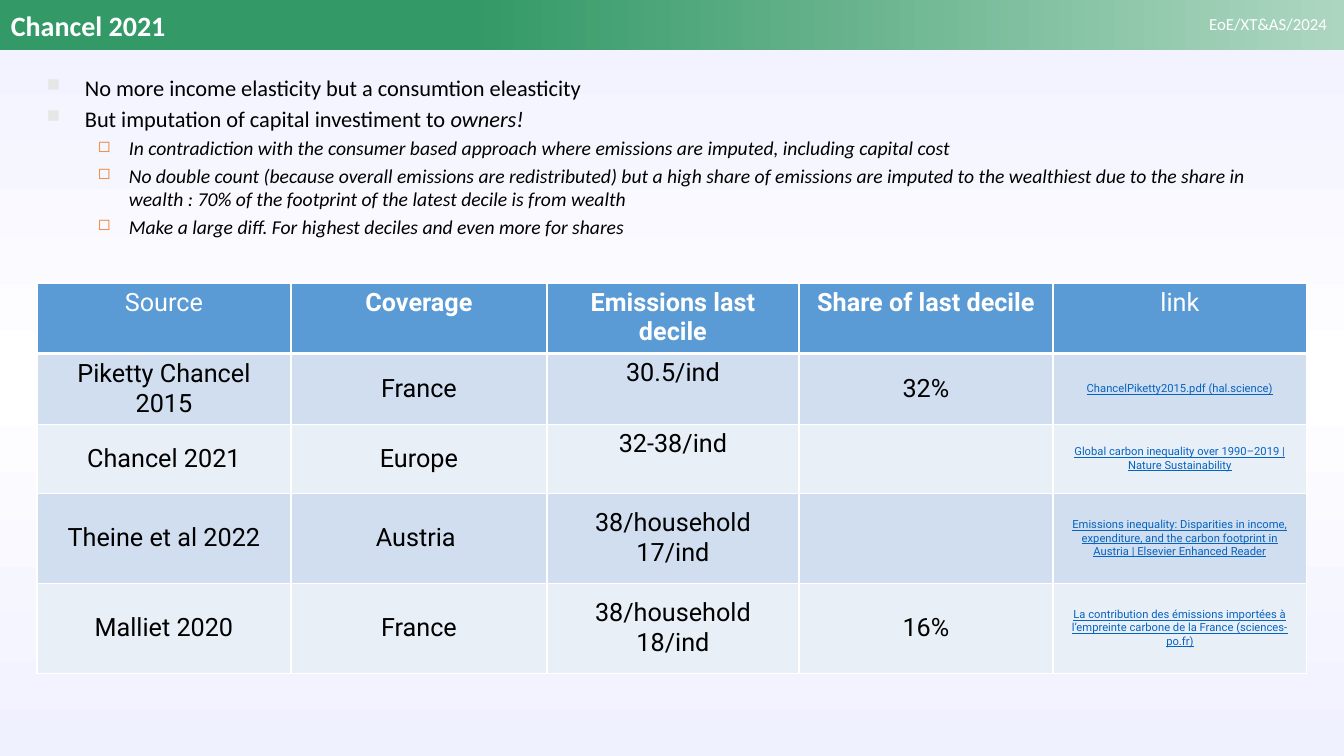
from copy import deepcopy
from lxml import etree
from pptx import Presentation
from pptx.dml.color import RGBColor
from pptx.enum.shapes import MSO_SHAPE
from pptx.enum.text import MSO_ANCHOR, PP_ALIGN
from pptx.oxml.ns import qn
from pptx.util import Pt

RECTANGLE = MSO_SHAPE.RECTANGLE
TOP, MIDDLE = MSO_ANCHOR.TOP, MSO_ANCHOR.MIDDLE
LEFT, RIGHT, CENTER = PP_ALIGN.LEFT, PP_ALIGN.RIGHT, PP_ALIGN.CENTER
PX = 914400 / 100.8
WHITE, BLACK, GREEN, LINK = "FFFFFF", "000000", "339966", "0563C1"


def color(value):
    return RGBColor.from_string(value)


def add_span(para, text, fill, **formats):
    span = para.add_run()
    span.text = text
    span.font.color.rgb = color(fill)
    for name, value in formats.items():
        setattr(span.font, name, value)


deck = Presentation()
deck.slide_width, deck.slide_height = round(1344 * PX), round(756 * PX)
page = deck.slides.add_slide(deck.slide_layouts[6])

backdrop = page.background.fill
backdrop.gradient()
backdrop.gradient_angle = 270
stop_list = page.element.xpath(".//p:bg//a:gsLst")[0]
stop_list.append(deepcopy(stop_list[0]))
for stop, position, tint in zip(backdrop.gradient_stops, (0, 0.5, 1), ("F0F1FE", WHITE, "F0F1FE")):
    stop.position = position
    stop.color.rgb = color(tint)

for left, width, end in ((0, 1344, GREEN), (471, 873, "ADD6C1")):
    band = page.shapes.add_shape(RECTANGLE, *(round(v * PX) for v in (left, 0, width, 50)))
    band.shadow.inherit = False
    band.line.fill.background()
    if end == GREEN:
        band.fill.solid()
        band.fill.fore_color.rgb = color(GREEN)
    else:
        band.fill.gradient()
        band.fill.gradient_angle = 0
        for stop, position, tint in zip(band.fill.gradient_stops, (0, 1), (GREEN, end)):
            stop.position = position
            stop.color.rgb = color(tint)

BULLETS = {
    0: dict(size=16, margin=38, hang=38, before=3.2, mark="■", tint="E7E6E6"),
    1: dict(size=14, margin=82, hang=31, before=2.8, mark="◻", tint="ED7D31"),
}
points = [
    (0, [("No more income elasticity but a consumtion eleasticity", False)]),
    (0, [("But imputation of capital investiment to ", False), ("owners!", True)]),
    (1, [("In contradiction with the consumer based approach where emissions are imputed, "
          "including capital cost", True)]),
    (1, [("No double count (because overall emissions are redistributed) but a high share of "
          "emissions are imputed to the wealthiest due to the share in wealth : 70% of the "
          "footprint of the latest decile is from wealth", True)]),
    (1, [("Make a large diff. For highest deciles and even more for shares", True)]),
]
texts = [
    ((1190, 9, 147, 31), TOP, RIGHT, "EoE/XT&AS/2024", 12, False),
    ((1, 0, 1210, 50), MIDDLE, LEFT, "Chancel 2021", 20, True),
    ((37, 69, 1270, 200), TOP, LEFT, None, None, None),
]
for place, anchor, align, text, size, bold in texts:
    box = page.shapes.add_textbox(*(round(v * PX) for v in place))
    frame = box.text_frame
    frame.word_wrap = True
    frame.vertical_anchor = anchor
    frame.paragraphs[0].alignment = align
    if text:
        add_span(frame.paragraphs[0], text, WHITE, size=Pt(size), bold=bold, name="Calibri")

for index, (level, spans) in enumerate(points):
    style = BULLETS[level]
    para = frame.add_paragraph() if index else frame.paragraphs[0]
    para.level = level
    properties = para._p.get_or_add_pPr()
    properties.set("marL", str(round(style["margin"] * PX)))
    properties.set("indent", str(round(-style["hang"] * PX)))
    tint = etree.SubElement(properties, qn("a:buClr"))
    etree.SubElement(tint, qn("a:srgbClr"), val=style["tint"])
    etree.SubElement(properties, qn("a:buSzPct"), val="80000")
    etree.SubElement(properties, qn("a:buChar"), char=style["mark"])
    if index:
        para.space_before = Pt(style["before"])
    for text, italic in spans:
        add_span(para, text, BLACK, size=Pt(style["size"]), italic=italic, name="Calibri")

rows = [
    ["Source", "Coverage", "Emissions last decile", "Share of last decile", "link"],
    ["Piketty Chancel 2015", "France", "30.5/ind", "32%", "ChancelPiketty2015.pdf (hal.science)"],
    ["Chancel 2021", "Europe", "32-38/ind", "",
     "Global carbon inequality over 1990–2019 | Nature Sustainability"],
    ["Theine et al 2022", "Austria ", "38/household\n17/ind", "",
     "Emissions inequality: Disparities in income, expenditure, and the carbon footprint "
     "in Austria | Elsevier Enhanced Reader"],
    ["Malliet 2020", "France", "38/household\n18/ind", "16%",
     "La contribution des émissions importées à l’empreinte carbone de la France (sciences-po.fr)"],
]
widths, heights = (254, 256, 252, 254, 254), (69, 69, 69, 90, 90)
place = (37, 283, sum(widths), sum(heights))
table = page.shapes.add_table(5, 5, *(round(v * PX) for v in place)).table
for column, width in zip(table.columns, widths):
    column.width = round(width * PX)
for row, height in zip(table.rows, heights):
    row.height = round(height * PX)

for r, row in enumerate(rows):
    for c, text in enumerate(row):
        cell = table.cell(r, c)
        header, link = r == 0, r > 0 and c == 4
        cell.vertical_anchor = TOP if header or (c == 2 and r < 3) else MIDDLE
        properties = cell._tc.get_or_add_tcPr()
        for side in ("lnL", "lnR", "lnT", "lnB"):
            thick = (r, side) in ((0, "lnB"), (1, "lnT"))
            border = etree.SubElement(properties, qn("a:" + side), w=str(Pt(3 if thick else 1)))
            paint = etree.SubElement(border, qn("a:solidFill"))
            etree.SubElement(paint, qn("a:srgbClr"), val=WHITE)
        cell.fill.solid()
        cell.fill.fore_color.rgb = color("5B9BD5" if header else ("E9EFF7", "D0DEEF")[r % 2])
        for index, line in enumerate(text.split("\n") if text else []):
            frame = cell.text_frame
            para = frame.add_paragraph() if index else frame.paragraphs[0]
            para.alignment = CENTER
            add_span(para, line, WHITE if header else LINK if link else BLACK, name="Roboto",
                     size=Pt(8 if link else 18), bold=header and c in (1, 2, 3), underline=link)

deck.save("out.pptx")
